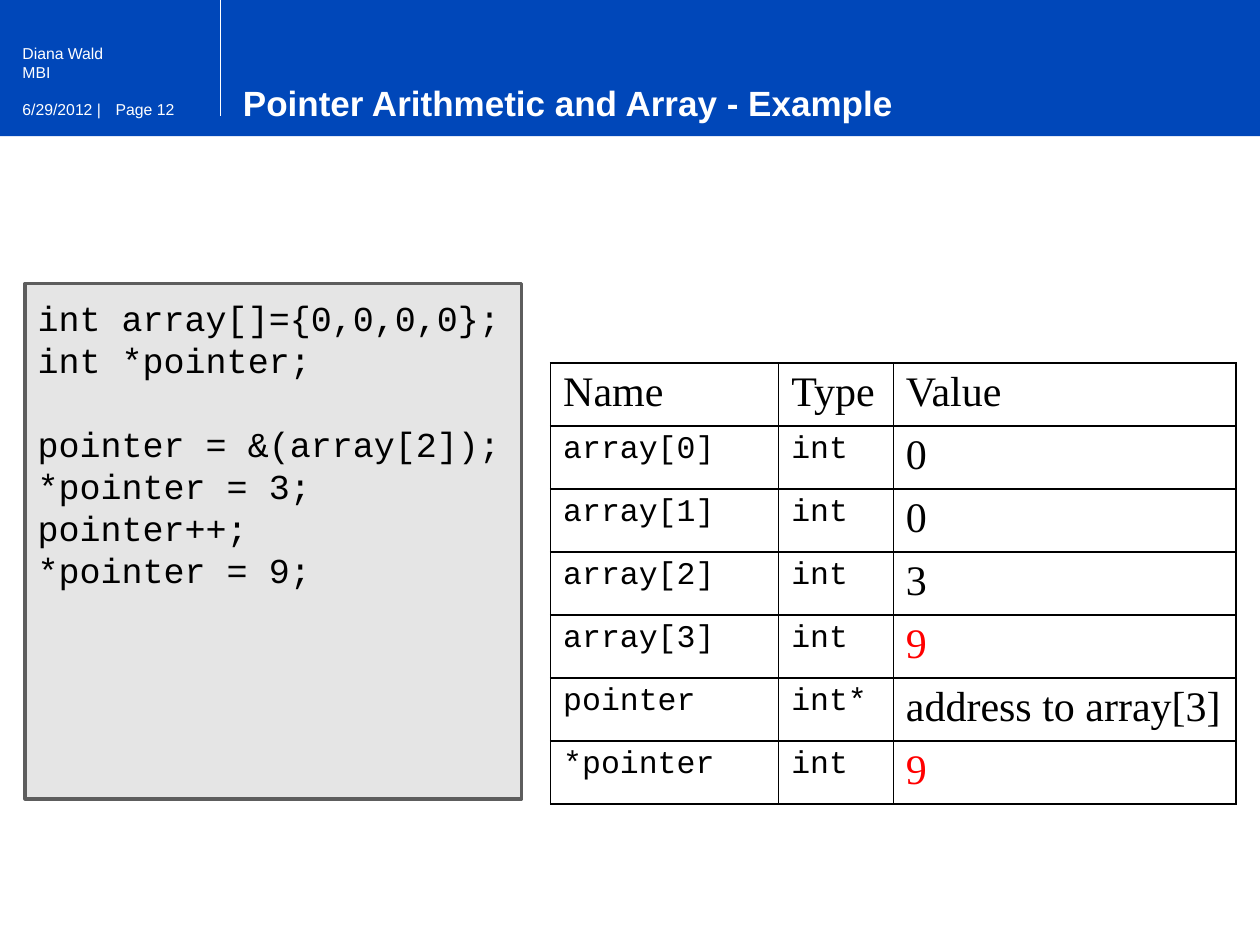
from dataclasses import dataclass

from lxml.etree import SubElement
from pptx import Presentation
from pptx.dml.color import RGBColor
from pptx.enum.shapes import MSO_CONNECTOR, MSO_SHAPE
from pptx.enum.text import MSO_ANCHOR, PP_ALIGN
from pptx.oxml.ns import qn
from pptx.util import Inches, Pt

HEADER_TEXTS = [
    ("Page 12", 0.82, 0.74, 1.01),
    ("6/29/2012 |", 0.08, 0.74, 0.92),
    ("Diana Wald", 0.08, 0.3, 1.6),
    ("MBI", 0.08, 0.45, 1.33),
]
TITLE = "Pointer Arithmetic and Array - Example"
CODE_BLOCKS = [
    ["int array[]={0,0,0,0};", "int *pointer;"],
    ["pointer = &(array[2]);", "*pointer = 3;", "pointer++;", "*pointer = 9;"],
]
VARIABLES = [
    ("Name", "Type", "Value"),
    ("array[0]", "int", "0"),
    ("array[1]", "int", "0"),
    ("array[2]", "int", "3"),
    ("array[3]", "int", "9"),
    ("pointer", "int*", "address to array[3]"),
    ("*pointer", "int", "9"),
]
CHANGED_VALUE = "9"
COLUMN_WIDTHS = (1.81, 0.91, 2.72)
TABLE_LEFT, TABLE_TOP, ROW_HEIGHT = 4.37, 2.88, 0.47
SLIDE_WIDTH, SLIDE_HEIGHT, HEADER_HEIGHT = 10, 7.5, 1.08


@dataclass(frozen=True)
class Theme:
    background: str = "CCDBF1"
    header: str = "0047B9"
    white: str = "FFFFFF"
    black: str = "000000"
    red: str = "FF0000"
    code_fill: str = "E5E5E5"
    code_border: str = "5D5D5D"
    sans: str = "Arial"
    mono: str = "Courier New"
    serif: str = "Times New Roman"
    small_size: int = 9
    title_size: int = 20
    code_size: int = 20
    code_line: int = 24
    cell_code_size: int = 18
    cell_size: int = 24


THEME = Theme()


def color(value):
    return RGBColor.from_string(value)


def format_runs(paragraph, font_name, size, font_color, bold=False):
    for run in paragraph.runs:
        run.font.name = font_name
        run.font.size = Pt(size)
        run.font.color.rgb = color(font_color)
        run.font.bold = bold


def add_rectangle(slide, left, top, width, height, fill):
    shape = slide.shapes.add_shape(
        MSO_SHAPE.RECTANGLE, Inches(left), Inches(top), Inches(width), Inches(height)
    )
    shape.shadow.inherit = False
    shape.fill.solid()
    shape.fill.fore_color.rgb = color(fill)
    shape.line.fill.background()
    return shape


def add_text(slide, text, left, top, width, height, size, bold=False):
    shape = slide.shapes.add_textbox(
        Inches(left), Inches(top), Inches(width), Inches(height)
    )
    shape.text_frame.word_wrap = True
    shape.text_frame.text = text
    format_runs(shape.text_frame.paragraphs[0], THEME.sans, size, THEME.white, bold)


def add_header(slide):
    add_rectangle(slide, 0, 0, SLIDE_WIDTH, HEADER_HEIGHT, THEME.header)
    divider = slide.shapes.add_connector(
        MSO_CONNECTOR.STRAIGHT, Inches(1.75), Inches(0.92), Inches(1.75), 0
    )
    divider.line.color.rgb = color(THEME.white)
    divider.line.width = Pt(0.9)
    SubElement(divider.element.spPr, qn("a:effectLst"))
    for text, left, top, width in HEADER_TEXTS:
        add_text(slide, text, left, top, width, 0.25, THEME.small_size)
    add_text(slide, TITLE, 1.83, 0.6, 6.17, 0.43, THEME.title_size, bold=True)


def add_code(slide):
    shape = add_rectangle(slide, 0.2, 2.25, 3.94, 4.09, THEME.code_fill)
    shape.line.color.rgb = color(THEME.code_border)
    shape.line.width = Pt(2)
    frame = shape.text_frame
    frame.word_wrap = True
    frame.vertical_anchor = MSO_ANCHOR.TOP
    frame.margin_top = Inches(0.1)
    frame.text = "\n".join(line for block in CODE_BLOCKS for line in block)
    for paragraph in frame.paragraphs:
        paragraph.alignment = PP_ALIGN.LEFT
        paragraph.line_spacing = Pt(THEME.code_line)
        format_runs(paragraph, THEME.mono, THEME.code_size, THEME.black)
    frame.paragraphs[len(CODE_BLOCKS[0])].space_before = Pt(THEME.code_line)


def add_borders(cell):
    properties = cell._tc.get_or_add_tcPr()
    for position, side in enumerate(("a:lnL", "a:lnR", "a:lnT", "a:lnB")):
        line = properties.makeelement(qn(side), {"w": str(Pt(1))})
        fill = SubElement(line, qn("a:solidFill"))
        SubElement(fill, qn("a:srgbClr"), val=THEME.black)
        properties.insert(position, line)


def add_variable_table(slide):
    table = slide.shapes.add_table(
        len(VARIABLES), len(COLUMN_WIDTHS), Inches(TABLE_LEFT), Inches(TABLE_TOP),
        Inches(sum(COLUMN_WIDTHS)), Inches(ROW_HEIGHT * len(VARIABLES)),
    ).table
    table.first_row = False
    table.horz_banding = False
    for column, width in zip(table.columns, COLUMN_WIDTHS):
        column.width = Inches(width)
    for row_index, values in enumerate(VARIABLES):
        table.rows[row_index].height = Inches(ROW_HEIGHT)
        for column_index, value in enumerate(values):
            cell = table.cell(row_index, column_index)
            cell.fill.solid()
            cell.fill.fore_color.rgb = color(THEME.white)
            add_borders(cell)
            cell.text_frame.text = value
            is_code = row_index > 0 and column_index < 2
            format_runs(
                cell.text_frame.paragraphs[0],
                THEME.mono if is_code else THEME.serif,
                THEME.cell_code_size if is_code else THEME.cell_size,
                THEME.red if value == CHANGED_VALUE else THEME.black,
            )


def main():
    presentation = Presentation()
    presentation.slide_width = Inches(SLIDE_WIDTH)
    presentation.slide_height = Inches(SLIDE_HEIGHT)
    slide = presentation.slides.add_slide(presentation.slide_layouts[6])
    slide.background.fill.solid()
    slide.background.fill.fore_color.rgb = color(THEME.background)
    body_height = SLIDE_HEIGHT - HEADER_HEIGHT
    add_rectangle(slide, 0, HEADER_HEIGHT, SLIDE_WIDTH, body_height, THEME.white)
    add_header(slide)
    add_code(slide)
    add_variable_table(slide)
    presentation.save("out.pptx")


if __name__ == "__main__":
    main()
